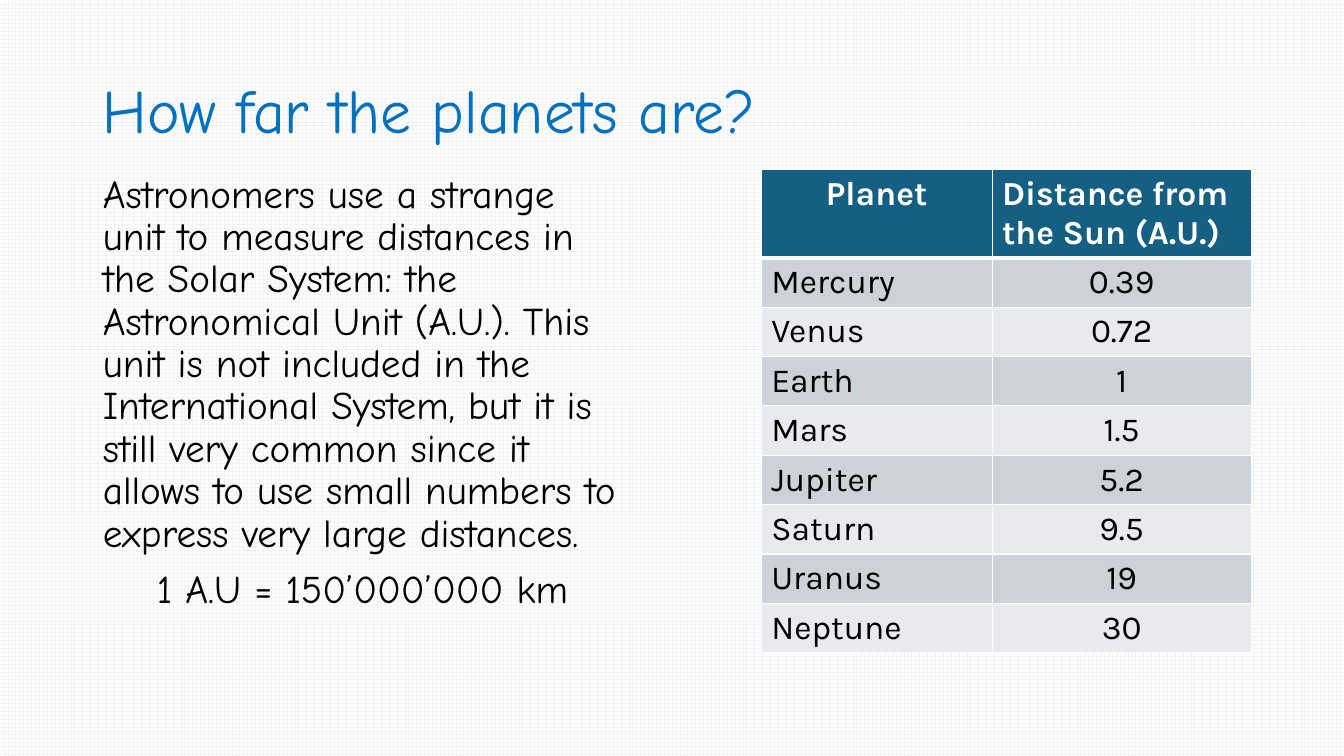
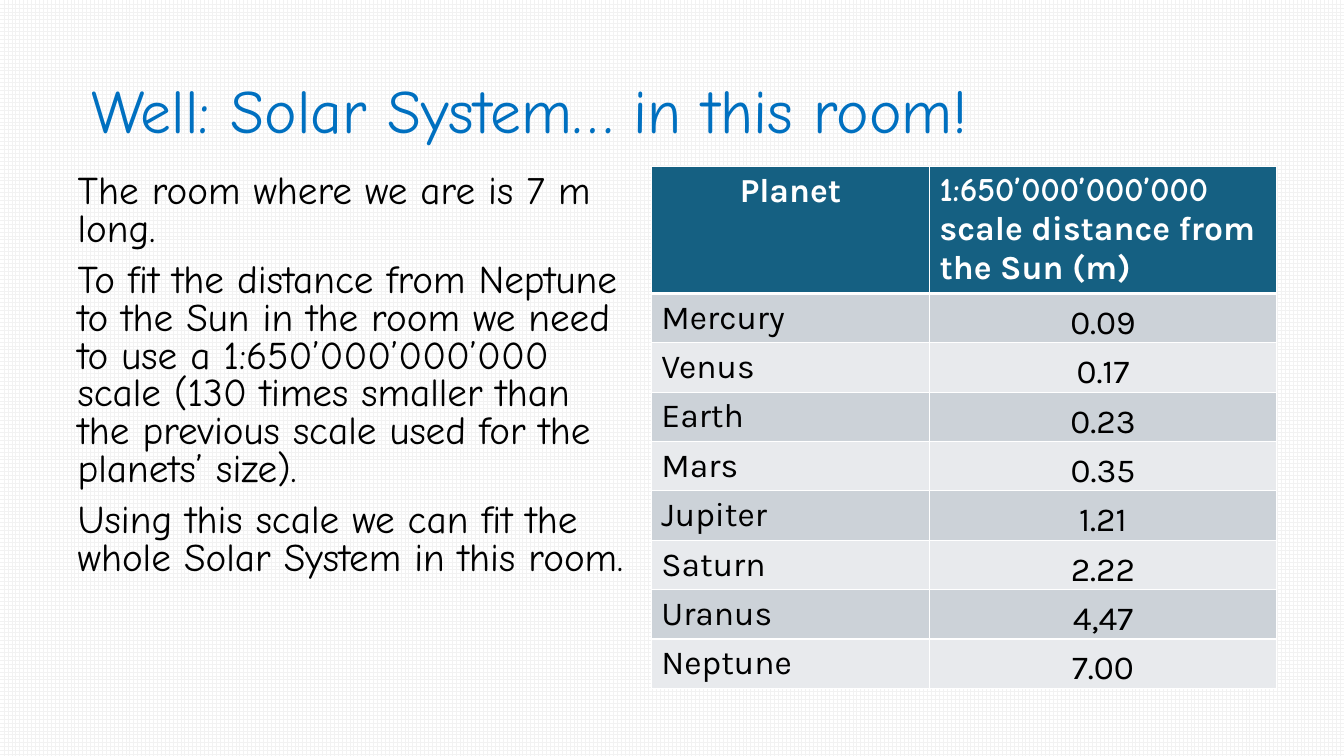
import pptx
import pptx.util
import pptx.dml.color
import pptx.enum.dml
import pptx.enum.text
import pptx.oxml
import pptx.oxml.ns

Inches = pptx.util.Inches
ALIGN = pptx.enum.text.PP_ALIGN
ANCHOR = pptx.enum.text.MSO_ANCHOR

COLOURS = {
    "title": "0070C0", "text": "000000", "white": "FFFFFF", "grid": "F2F2F2",
    "header": "156082", "odd": "CCD2D8", "even": "E8EAED",
}
HAND, SANS = "Comic Neue", "Karla"
ROW_HEIGHT = 0.49
PLANETS = ["Mercury", "Venus", "Earth", "Mars", "Jupiter", "Saturn", "Uranus", "Neptune"]

PAGES = [
    {
        "title": "How far the planets are?",
        "title_left": 0.92,
        "body": [
            ("Astronomers use a strange unit to measure distances in the Solar System: "
             "the Astronomical Unit (A.U.). This unit is not included in the International "
             "System, but it is still very common since it allows to use small numbers to "
             "express very large distances.", ALIGN.LEFT),
            ("1 A.U = 150’000’000 km", ALIGN.CENTER),
        ],
        "body_box": (0.92, 1.68, 5.35, 5.08),
        "body_spacing": 0.9,
        "heading": [("Distance from the Sun (A.U.)", SANS)],
        "distances": ["0.39", "0.72", "1", "1.5", "5.2", "9.5", "19", "30"],
        "table_at": (7.55, 1.68),
        "columns": (2.29, 2.57),
        "header_height": 0.86,
        "sunk": False,
    },
    {
        "title": "Well: Solar System… in this room!",
        "title_left": 0.81,
        "body": [
            ("The room where we are is 7 m long.", ALIGN.LEFT),
            ("To fit the distance from Neptune to the Sun in the room we need to use a "
             "1:650’000’000’000 scale (130 times smaller than the previous scale used for "
             "the planets’ size).", ALIGN.LEFT),
            ("Using this scale we can fit the whole Solar System in this room.", ALIGN.LEFT),
        ],
        "body_box": (0.67, 1.68, 5.71, 5.08),
        "body_spacing": 0.8,
        "heading": [("1:650’000’000’000", HAND), ("scale distance from the Sun (m)", SANS)],
        "distances": ["0.09", "0.17", "0.23", "0.35", "1.21", "2.22", "4,47", "7.00"],
        "table_at": (6.46, 1.65),
        "columns": (2.76, 3.44),
        "header_height": 1.26,
        "sunk": True,
    },
]


def colour(name):
    return pptx.dml.color.RGBColor.from_string(COLOURS[name])


def write(frame, index, text, font=HAND, size=28, ink="text", bold=False,
          align=ALIGN.LEFT, spacing=None, before=0):
    para = frame.add_paragraph() if index else frame.paragraphs[0]
    para.alignment = align
    para.space_before = pptx.util.Pt(before)
    if spacing:
        para.line_spacing = spacing
    span = para.add_run()
    span.text = text
    span.font.name = font
    span.font.size = pptx.util.Pt(size)
    span.font.bold = bold
    span.font.color.rgb = colour(ink)
    return para


def place(shape, box):
    shape.left, shape.top, shape.width, shape.height = map(Inches, box)
    frame = shape.text_frame
    frame.word_wrap = True
    frame.auto_size = pptx.enum.text.MSO_AUTO_SIZE.NONE
    return frame


def remove_bullet(para):
    properties = para._p.get_or_add_pPr()
    properties.set("marL", "0")
    properties.set("indent", "0")
    properties.append(pptx.oxml.parse_xml(f'<a:buNone {pptx.oxml.ns.nsdecls("a")}/>'))


def style_cell(cell, fill, bottom_width=1):
    cell.fill.solid()
    cell.fill.fore_color.rgb = colour(fill)
    properties = cell._tc.get_or_add_tcPr()
    widths = {"lnL": 1, "lnR": 1, "lnT": 1, "lnB": bottom_width}
    for position, (edge, width) in enumerate(widths.items()):
        properties.insert(position, pptx.oxml.parse_xml(
            f'<a:{edge} {pptx.oxml.ns.nsdecls("a")} w="{pptx.util.Pt(width)}">'
            f'<a:solidFill><a:srgbClr val="{COLOURS["white"]}"/></a:solidFill></a:{edge}>'))


def add_distances(page, content):
    height = content["header_height"] + ROW_HEIGHT * len(PLANETS)
    box = (*content["table_at"], sum(content["columns"]), height)
    table = page.shapes.add_table(len(PLANETS) + 1, 2, *map(Inches, box)).table
    for column, width in zip(table.columns, content["columns"]):
        column.width = Inches(width)
    for number, row in enumerate(table.rows):
        row.height = Inches(ROW_HEIGHT if number else content["header_height"])

    header = {"size": 24, "ink": "white", "bold": True}
    write(table.cell(0, 0).text_frame, 0, "Planet", font=SANS, align=ALIGN.CENTER, **header)
    for index, (text, font) in enumerate(content["heading"]):
        write(table.cell(0, 1).text_frame, index, text, font=font, **header)
    for column in range(2):
        style_cell(table.cell(0, column), "header", bottom_width=3)

    for number, (planet, distance) in enumerate(zip(PLANETS, content["distances"]), 1):
        name, value = table.cell(number, 0), table.cell(number, 1)
        write(name.text_frame, 0, planet, font=SANS, size=24)
        write(value.text_frame, 0, distance, font=SANS, size=24, align=ALIGN.CENTER)
        if content["sunk"]:
            value.vertical_anchor = ANCHOR.BOTTOM
            value.margin_left = value.margin_right = value.margin_top = Inches(0.01)
            value.margin_bottom = 0
        for cell in (name, value):
            style_cell(cell, "odd" if number % 2 else "even")


def add_page(deck, content):
    page = deck.slides.add_slide(deck.slide_layouts[1])
    title = place(page.shapes.title, (content["title_left"], 0.4, 11.5, 1.45))
    title.vertical_anchor = ANCHOR.MIDDLE
    write(title, 0, content["title"], size=44, ink="title", spacing=0.9)
    body = place(page.placeholders[1], content["body_box"])
    for index, (text, align) in enumerate(content["body"]):
        remove_bullet(write(body, index, text, align=align,
                            spacing=content["body_spacing"], before=10))
    add_distances(page, content)


def main():
    deck = pptx.Presentation()
    deck.slide_width, deck.slide_height = Inches(13.33), Inches(7.5)
    backdrop = deck.slide_master.background.fill
    backdrop.patterned()
    backdrop.pattern = pptx.enum.dml.MSO_PATTERN.LARGE_GRID
    backdrop.fore_color.rgb = colour("grid")
    backdrop.back_color.rgb = colour("white")
    for content in PAGES:
        add_page(deck, content)
    deck.save("out.pptx")


if __name__ == "__main__":
    main()
